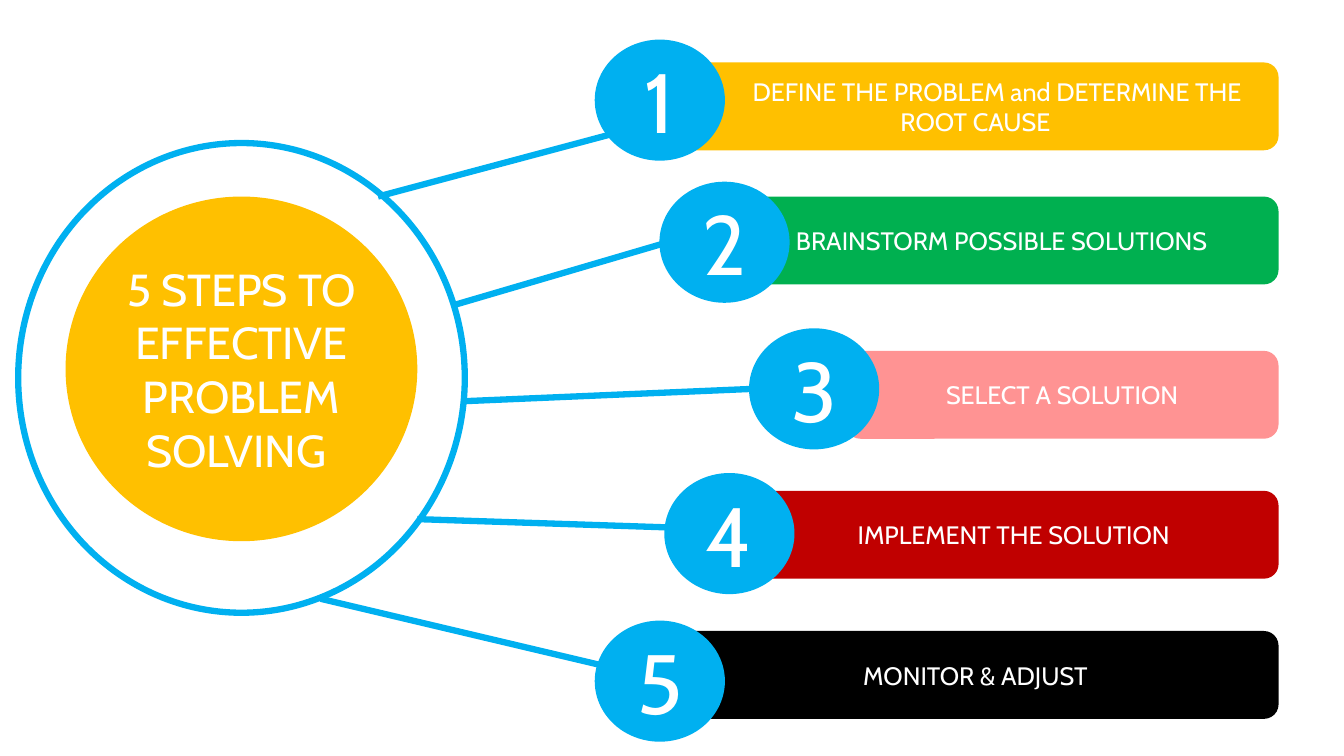
from dataclasses import dataclass
from typing import Any

import lxml.etree
import pptx
import pptx.dml.color
import pptx.enum.shapes
import pptx.enum.text
import pptx.oxml.ns
import pptx.shapes.autoshape
import pptx.slide
import pptx.util

Pt = pptx.util.Pt
Shapes = pptx.enum.shapes.MSO_SHAPE


@dataclass(frozen=True)
class Theme:
    font: str = "Cabin"
    white: str = "FFFFFF"
    blue: str = "00B0F0"
    amber: str = "FFC000"
    green: str = "00B050"
    pink: str = "FF9393"
    red: str = "C00000"
    black: str = "000000"
    title_size: float = 32
    label_size: float = 18
    number_size: float = 60
    stroke: float = 4.5


@dataclass(frozen=True)
class Frame:
    left: float
    top: float
    width: float
    height: float


@dataclass(frozen=True)
class Step:
    label: str
    color: str
    bar_left: float
    bar_top: float
    badge_left: float
    badge_top: float
    spoke_start: tuple[float, float]
    spoke_end: tuple[float, float]
    first_indent: float = 0


THEME = Theme()
BAR_RIGHT, BAR_HEIGHT = 913.3, 62.8
BADGE_WIDTH, BADGE_HEIGHT = 93, 86.5
CORE = Frame(46.8, 140.4, 251.3, 246.2)
RING = Frame(13, 102.2, 319, 335.5)
TITLE = "5 STEPS TO EFFECTIVE PROBLEM SOLVING "

STEPS = [
    Step("DEFINE THE PROBLEM and DETERMINE THE ROOT CAUSE", THEME.amber,
         480.2, 44.6, 424.8, 28.3, (270, 140.4), (437, 95.8), 31),
    Step("BRAINSTORM POSSIBLE SOLUTIONS", THEME.green,
         517.7, 140.4, 471, 129.8, (323.3, 218.2), (480.2, 172.1)),
    Step("SELECT A SOLUTION", THEME.pink,
         604.1, 250.6, 535, 234.5, (331.2, 286.6), (535, 277.9)),
    Step("IMPLEMENT THE SOLUTION", THEME.red,
         535, 350.6, 474.5, 337.9, (298.1, 370.8), (494.6, 377.3)),
    Step("MONITOR & ADJUST", THEME.black,
         480.2, 450.7, 424.8, 443.3, (229, 427.7), (447.8, 479.5)),
]


def rgb(color: str) -> pptx.dml.color.RGBColor:
    return pptx.dml.color.RGBColor.from_string(color)


def apply_format(target: Any, values: dict[str, Any]) -> None:
    for name, value in values.items():
        setattr(target, name, value)


def style_line(line: Any) -> None:
    line.color.rgb = rgb(THEME.blue)
    line.width = Pt(THEME.stroke)


def add_box(page: pptx.slide.Slide, kind: Shapes,
            frame: Frame) -> pptx.shapes.autoshape.Shape:
    box = page.shapes.add_shape(kind, Pt(frame.left), Pt(frame.top),
                                Pt(frame.width), Pt(frame.height))
    box.shadow.inherit = False
    return box


def add_filled(page: pptx.slide.Slide, kind: Shapes, frame: Frame, color: str,
               text: str, size: float, first_indent: float = 0) -> None:
    box = add_box(page, kind, frame)
    box.fill.solid()
    box.fill.fore_color.rgb = rgb(color)
    box.line.fill.background()
    apply_format(box.text_frame, {
        "word_wrap": True,
        "vertical_anchor": pptx.enum.text.MSO_ANCHOR.MIDDLE,
    })
    para = box.text_frame.paragraphs[0]
    para.alignment = pptx.enum.text.PP_ALIGN.CENTER
    if first_indent:
        properties = para._p.get_or_add_pPr()
        properties.set("marL", "0")
        properties.set("indent", str(int(Pt(first_indent))))
    span = para.add_run()
    span.text = text
    apply_format(span.font, {"name": THEME.font, "size": Pt(size)})
    span.font.color.rgb = rgb(THEME.white)


def add_ring(page: pptx.slide.Slide) -> None:
    ring = add_box(page, Shapes.FLOWCHART_CONNECTOR, RING)
    ring.fill.background()
    style_line(ring.line)


def add_bar(page: pptx.slide.Slide, step: Step) -> None:
    frame = Frame(step.bar_left, step.bar_top,
                  BAR_RIGHT - step.bar_left, BAR_HEIGHT)
    add_filled(page, Shapes.ROUNDED_RECTANGLE, frame, step.color,
               step.label, THEME.label_size, step.first_indent)


def add_badge(page: pptx.slide.Slide, step: Step, number: int) -> None:
    frame = Frame(step.badge_left, step.badge_top, BADGE_WIDTH, BADGE_HEIGHT)
    add_filled(page, Shapes.FLOWCHART_CONNECTOR, frame, THEME.blue,
               str(number), THEME.number_size)


def add_spoke(page: pptx.slide.Slide, step: Step) -> None:
    points = [Pt(value) for value in (*step.spoke_start, *step.spoke_end)]
    spoke = page.shapes.add_connector(
        pptx.enum.shapes.MSO_CONNECTOR.STRAIGHT, *points)
    style_line(spoke.line)
    lxml.etree.SubElement(spoke._element.spPr,
                          pptx.oxml.ns.qn("a:effectLst"))


def main() -> None:
    deck = pptx.Presentation()
    apply_format(deck, {"slide_width": Pt(960), "slide_height": Pt(540)})
    page = deck.slides.add_slide(deck.slide_layouts[6])
    add_filled(page, Shapes.OVAL, CORE, THEME.amber, TITLE, THEME.title_size)
    for step in STEPS:
        add_bar(page, step)
    for number, step in enumerate(STEPS, start=1):
        add_badge(page, step, number)
    add_ring(page)
    for step in STEPS:
        add_spoke(page, step)
    deck.save("out.pptx")


if __name__ == "__main__":
    main()
